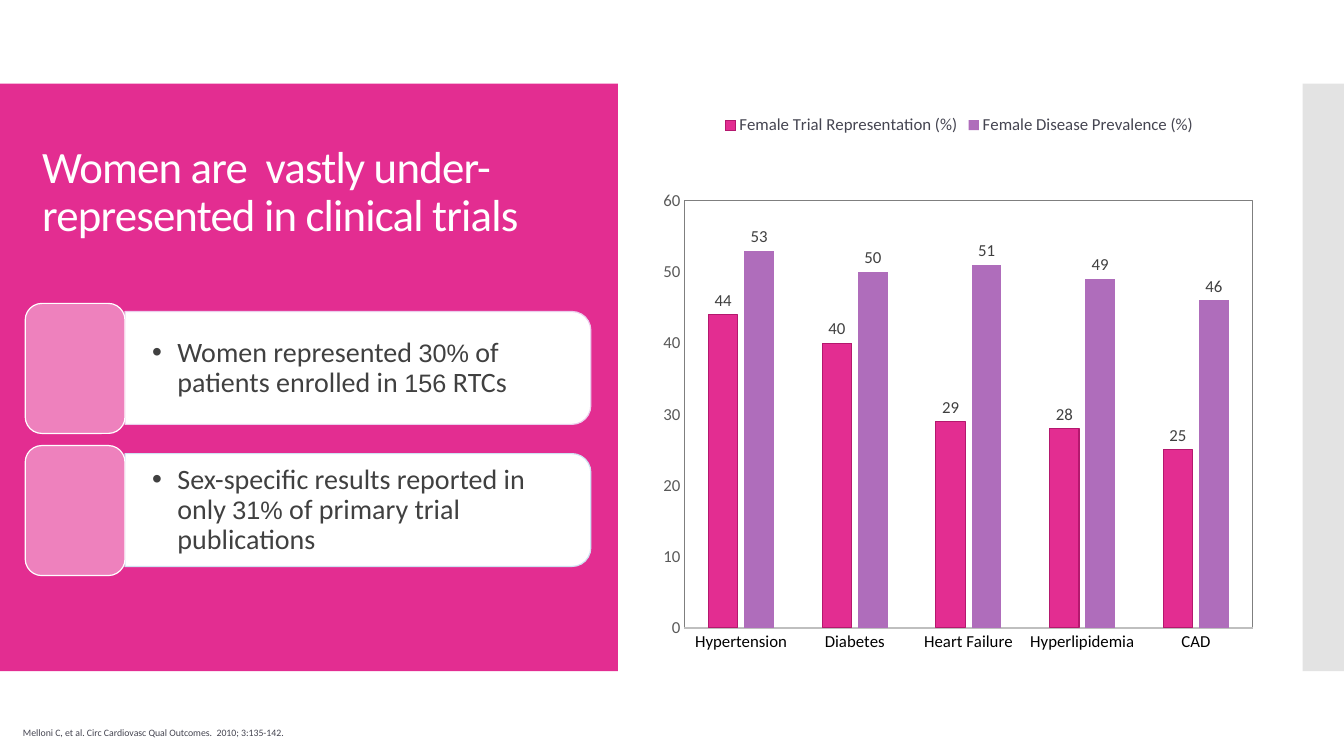
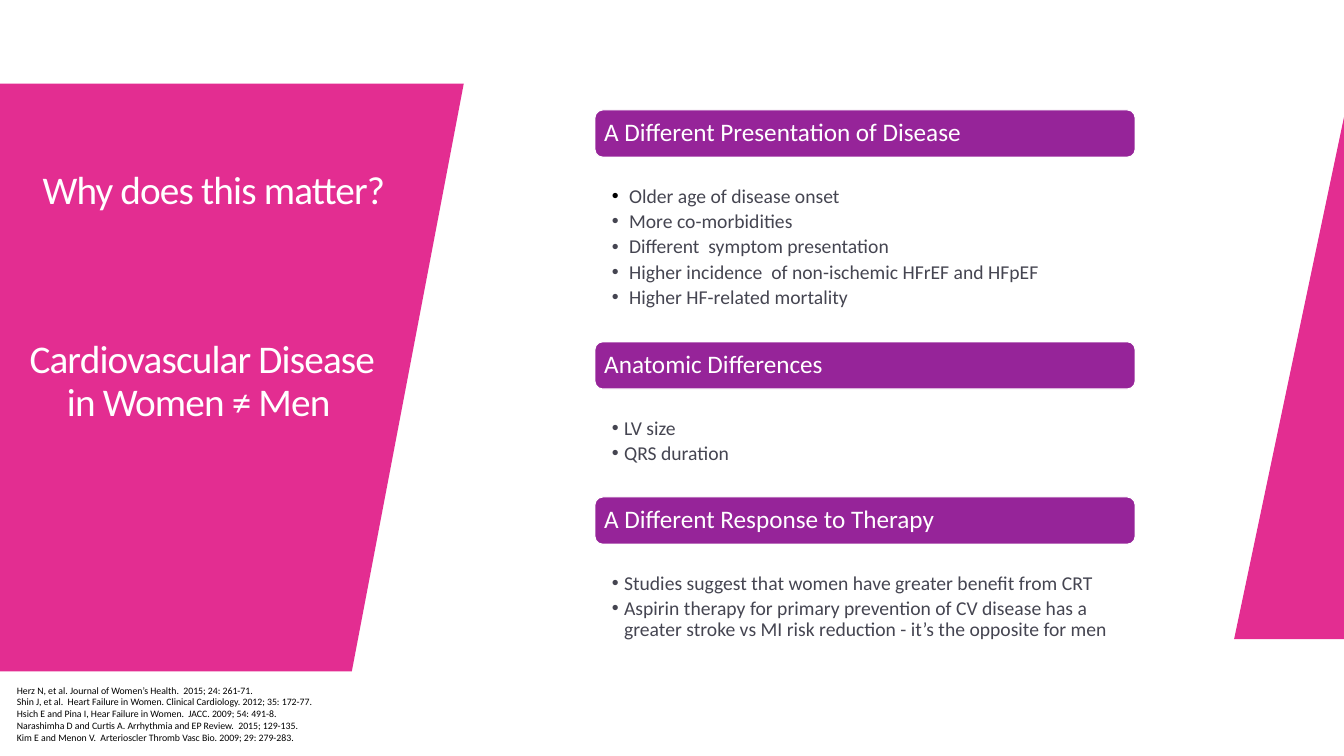
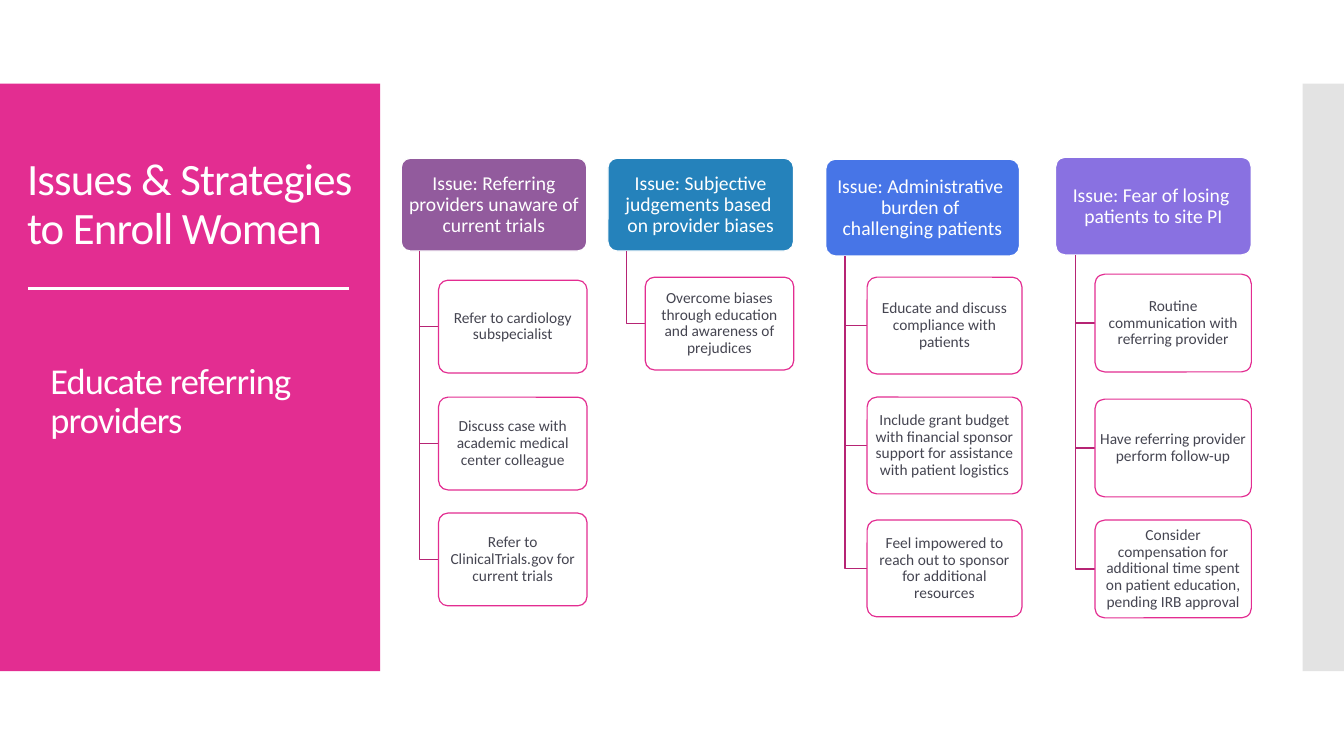
import pptx
import pptx.chart.data
import pptx.dml.color
import pptx.enum.chart
import pptx.enum.shapes
import pptx.enum.text
import pptx.oxml
import pptx.oxml.ns
import pptx.util
from lxml import etree

Inches = pptx.util.Inches
Pt = pptx.util.Pt
SHAPE = pptx.enum.shapes.MSO_SHAPE
ALIGN = pptx.enum.text.PP_ALIGN
ANCHOR = pptx.enum.text.MSO_ANCHOR
qn = pptx.oxml.ns.qn

# Shared look
FONT, FIGURE_FONT = "Calibri", "Arial"
PINK, PURPLE, WHITE, BLACK = "E32D91", "962499", "FFFFFF", "000000"
BODY, DARK, BRANCH = "454551", "404040", "B62474"
BAND_TOP, BAND_HEIGHT = 0.83, 5.83
HAIRLINE = 0.85


def rgb(color):
    return pptx.dml.color.RGBColor.from_string(color)


def set_alpha(shape, percent):
    color = shape._element.spPr.find(qn("a:solidFill"))[0]
    etree.SubElement(color, qn("a:alpha")).set("val", str(percent * 1000))


def style_shape(shape, fill=None, line=None):
    shape.shadow.inherit = False
    if fill:
        shape.fill.solid()
        shape.fill.fore_color.rgb = rgb(fill)
    else:
        shape.fill.background()
    if line:
        shape.line.color.rgb = rgb(line)
        shape.line.width = Pt(HAIRLINE)
    else:
        shape.line.fill.background()
    return shape


def add_block(slide, kind, box, fill, line=None):
    shape = slide.shapes.add_shape(kind, *map(Inches, box))
    return style_shape(shape, fill, line)


def add_outline(slide, points, fill=None, line=None):
    """A closed outline when filled, otherwise an open bent line."""
    corners = [(Inches(x), Inches(y)) for x, y in points]
    builder = slide.shapes.build_freeform(*corners[0])
    builder.add_line_segments(corners[1:], close=fill is not None)
    return style_shape(builder.convert_to_shape(), fill, line)


def add_line(slide, start, end, color, width):
    line = slide.shapes.add_connector(
        pptx.enum.shapes.MSO_CONNECTOR.STRAIGHT, *map(Inches, start + end))
    line.line.color.rgb = rgb(color)
    line.line.width = Pt(width)
    etree.SubElement(line._element.spPr, qn("a:effectLst"))


def add_bullet(paragraph, indent, color=None):
    properties = paragraph._p.get_or_add_pPr()
    properties.set("marL", str(Inches(indent)))
    properties.set("indent", str(-Inches(indent)))
    if color:
        bullet_color = etree.SubElement(properties, qn("a:buClr"))
        etree.SubElement(bullet_color, qn("a:srgbClr")).set("val", color)
    etree.SubElement(properties, qn("a:buFont")).set("typeface", "Arial")
    etree.SubElement(properties, qn("a:buChar")).set("char", "•")


def style_font(font, size, color, name=FONT):
    font.name = name
    font.size = Pt(size)
    font.color.rgb = rgb(color)


def add_run(paragraph, text, size, color, name=FONT, tracking=0):
    run = paragraph.add_run()
    run.text = text
    style_font(run.font, size, color, name)
    if tracking:
        run._r.get_or_add_rPr().set("spc", str(tracking))


def write_text(shape, texts, size, color, align=ALIGN.LEFT, anchor=ANCHOR.MIDDLE,
               insets=(0.1, 0.05, 0.1, 0.05), line_spacing=0.9, tracking=0,
               bullet_indent=None, first_bullet=None, space_after=0):
    """Fill a shape, one paragraph per text; a newline is a line break."""
    frame = shape.text_frame
    frame.word_wrap = True
    frame.vertical_anchor = anchor
    (frame.margin_left, frame.margin_top,
     frame.margin_right, frame.margin_bottom) = map(Inches, insets)
    for index, text in enumerate(texts):
        paragraph = frame.add_paragraph() if index else frame.paragraphs[0]
        if bullet_indent:
            add_bullet(paragraph, bullet_indent, None if index else first_bullet)
        paragraph.alignment = align
        paragraph.line_spacing = line_spacing
        paragraph.space_after = Pt(space_after)
        for number, part in enumerate(text.split("\n")):
            if number:
                paragraph.add_line_break()
            add_run(paragraph, part, size, color, tracking=tracking)
    return frame.paragraphs


def add_text(slide, box, texts, size, color, **options):
    shape = slide.shapes.add_textbox(*map(Inches, box))
    return write_text(shape, texts, size, color, **options)


def add_title(slide, box, texts, size=32, **options):
    return add_text(slide, box, texts, size, WHITE, tracking=-60, **options)


def indent_left(paragraph, indent):
    paragraph._p.get_or_add_pPr().set("marL", str(Inches(indent)))


def add_references(slide, box, references, color):
    add_text(slide, box, references, 7, color, anchor=ANCHOR.TOP, line_spacing=1.0)


def add_bands(slide, panel_width):
    add_block(slide, SHAPE.RECTANGLE, (0, BAND_TOP, panel_width, BAND_HEIGHT), PINK)
    edge = add_block(slide, SHAPE.RECTANGLE,
                     (12.92, BAND_TOP, 0.42, BAND_HEIGHT), "C8C8C8")
    set_alpha(edge, 50)


# Slide 1: facts and chart
def add_fact(slide, top, parts, outline):
    """Parts alternate between plain words and figures."""
    width, height = 4.62, 1.12
    left, card_top = 1.24, top + 0.08
    # The card stands upright before its quarter turn
    card = add_block(slide, SHAPE.ROUND_2_SAME_RECTANGLE,
                     (left + (width - height) / 2, card_top - (width - height) / 2,
                      height, width), WHITE, outline)
    card.rotation = 90
    paragraph, = add_text(slide, (left, card_top + 0.06, 4.57, 1.01), parts[:1], 20,
                          DARK, insets=(0.27, 0.14, 0.27, 0.14), bullet_indent=0.25)
    for index, part in enumerate(parts[1:]):
        size, name = (20, FONT) if index % 2 else (18, FIGURE_FONT)
        add_run(paragraph, part, size, DARK, name)
    add_block(slide, SHAPE.ROUNDED_RECTANGLE, (0.25, top, 0.99, 1.29), "EE81BD", WHITE)


def place_plot(chart, x, y, width, height):
    """Fix the inner plot area, in percent of the chart, and frame it in grey."""
    plot_area = chart._chartSpace.chart.plotArea
    for old in plot_area.findall(qn("c:layout")):
        plot_area.remove(old)
    layout = etree.Element(qn("c:layout"))
    manual = etree.SubElement(layout, qn("c:manualLayout"))
    settings = (("layoutTarget", "inner"), ("xMode", "edge"), ("yMode", "edge"),
                ("x", x / 100), ("y", y / 100), ("w", width / 100), ("h", height / 100))
    for name, value in settings:
        etree.SubElement(manual, qn("c:" + name)).set("val", str(value))
    plot_area.insert(0, layout)
    plot_area.append(pptx.oxml.parse_xml(
        '<c:spPr xmlns:c="http://schemas.openxmlformats.org/drawingml/2006/chart"'
        ' xmlns:a="http://schemas.openxmlformats.org/drawingml/2006/main"><a:noFill/>'
        '<a:ln w="9525"><a:solidFill><a:srgbClr val="7F7F7F"/></a:solidFill></a:ln>'
        '</c:spPr>'))


def add_trial_chart(slide):
    kinds = pptx.enum.chart
    data = pptx.chart.data.CategoryChartData()
    data.categories = ["Hypertension", "Diabetes", "Heart Failure",
                       "Hyperlipidemia", "CAD"]
    data.add_series("Female Trial Representation (%)", (44, 40, 29, 28, 25))
    data.add_series("Female Disease Prevalence (%)", (53, 50, 51, 49, 46))
    chart = slide.shapes.add_chart(
        kinds.XL_CHART_TYPE.COLUMN_CLUSTERED,
        *map(Inches, (6.45, 1.03, 6.13, 5.83)), data).chart
    style_font(chart.font, 10, BLACK)
    chart.has_title = False
    chart.has_legend = True
    chart.legend.position = kinds.XL_LEGEND_POSITION.TOP
    chart.legend.include_in_layout = False
    style_font(chart.legend.font, 12, BODY)

    for axis, color in ((chart.category_axis, BLACK), (chart.value_axis, "595959")):
        axis.has_major_gridlines = False
        axis.major_tick_mark = axis.minor_tick_mark = kinds.XL_TICK_MARK.NONE
        style_font(axis.tick_labels.font, 12, color)
    chart.category_axis.format.line.color.rgb = rgb("BFBFBF")
    chart.category_axis.format.line.width = Pt(1.5)
    chart.value_axis.format.line.fill.background()
    chart.value_axis.minimum_scale = 0
    chart.value_axis.maximum_scale = 60
    chart.value_axis.major_unit = 10

    plot = chart.plots[0]
    plot.gap_width, plot.overlap = 164, -22
    plot.vary_by_categories = False
    for series, color in zip(plot.series, (PINK, "AF6DBB")):
        series.format.fill.solid()
        series.format.fill.fore_color.rgb = rgb(color)
        labels = series.data_labels
        labels.show_value = True
        labels.position = kinds.XL_LABEL_POSITION.OUTSIDE_END
        style_font(labels.font, 12, DARK)
    trial_line = plot.series[0].format.line
    trial_line.color.rgb = rgb("B4186E")
    trial_line.width = Pt(0.75)
    place_plot(chart, 5.5, 16.5, 92, 72.7)


def build_trials(slide):
    add_bands(slide, 6.13)
    add_title(slide, (0.32, 1.23, 5.47, 1.37),
              ["Women are  vastly under-represented in clinical trials"])
    add_fact(slide, 3.01, ["Women represented ", "30%", " of  patients enrolled in ",
                           "156", " RTCs"], "EBCDEC")
    add_fact(slide, 4.42, ["Sex-specific results reported in only ", "31%",
                           " of primary trial publications"], "D0E1F2")
    add_references(slide, (0.13, 7.16, 3.5, 0.22), [
        "Melloni C, et al. Circ Cardiovasc Qual Outcomes.  2010; 3:135-142."], BODY)
    add_trial_chart(slide)


# Slide 2: differences between women and men
def add_topic(slide, top, heading, points, indent=0.12, first_bullet=None):
    left, width, height = 5.9, 5.36, 0.47
    header = add_block(slide, SHAPE.ROUNDED_RECTANGLE, (left, top, width, height),
                       PURPLE, WHITE)
    write_text(header, [heading], 18, WHITE, insets=(0.07, 0.07, 0.07, 0.07))
    add_text(slide, (left, top + 0.73, width, 0.25 * len(points) + 0.1), points, 14,
             BODY, anchor=ANCHOR.TOP, insets=(0.17, 0.03, 0.14, 0.03),
             bullet_indent=indent, first_bullet=first_bullet, space_after=2.9)


def build_differences(slide):
    bottom = BAND_TOP + BAND_HEIGHT
    add_outline(slide, [(3.49, bottom), (0, bottom), (0, BAND_TOP), (4.6, BAND_TOP)],
                PINK)
    question, subject, _ = add_title(
        slide, (-0.17, 1.04, 4.28, 3.82),
        ["Why does this matter?", "Cardiovascular Disease", "in Women ≠ Men"],
        size=28, align=ALIGN.CENTER)
    indent_left(question, 0.3)
    indent_left(subject, 0.07)
    subject.space_before = Pt(91)

    add_topic(slide, 1.09, "A Different Presentation of Disease", [
        "Older age of disease onset", "More co-morbidities",
        "Different  symptom presentation",
        "Higher incidence  of non-ischemic HFrEF and HFpEF",
        "Higher HF-related mortality"], indent=0.17, first_bullet=BLACK)
    add_topic(slide, 3.39, "Anatomic Differences", ["LV size", "QRS duration"])
    add_topic(slide, 4.93, "A Different Response to Therapy", [
        "Studies suggest that women have greater benefit from CRT",
        "Aspirin therapy for primary prevention of CV disease has a greater stroke "
        "vs MI risk reduction - it’s the opposite for men"])

    add_outline(slide, [(13.33, 6.34), (12.24, 6.34), (13.33, 1.16)], PINK)
    add_references(slide, (0.07, 6.74, 3.5, 0.69), [
        "Herz N, et al. Journal of Women’s Health.  2015; 24: 261-71.",
        "Shin J, et al.  Heart Failure in Women. Clinical Cardiology. 2012; 35: 172-77.",
        "Hsich E and Pina I, Hear Failure in Women.  JACC. 2009; 54: 491-8.",
        "Narashimha D and Curtis A. Arrhythmia and EP Review.  2015; 129-135.",
        "Kim E and Menon V.  Arterioscler Thromb Vasc Bio. 2009; 29: 279-283."], BLACK)


# Slide 3: issues and strategies
def add_issue(slide, left, top, height, color, heading, card_left, strategies):
    """Header twice as wide as high, with an elbow down to each strategy card."""
    width, card_width = 2 * height, 1.6 * height
    trunk_x, bottom = left + 0.1 * width, top + height
    header = add_block(slide, SHAPE.ROUNDED_RECTANGLE, (left, top, width, height),
                       color, WHITE)
    header.adjustments[0] = 0.1
    write_text(header, [heading], 14, WHITE, align=ALIGN.CENTER,
               insets=(0.03, 0.03, 0.03, 0.02))
    for card_top, text in strategies:
        middle = card_top + height / 2
        add_outline(slide, [(trunk_x, bottom), (trunk_x, middle), (card_left, middle)],
                    line=BRANCH)
        card = add_block(slide, SHAPE.ROUNDED_RECTANGLE,
                         (card_left, card_top, card_width, height), WHITE, PINK)
        card.adjustments[0] = 0.1
        set_alpha(card, 90)
        write_text(card, [text], 11, BODY, align=ALIGN.CENTER,
                   insets=(0.02, 0.02, 0.02, 0.02))


def build_strategies(slide):
    add_bands(slide, 3.77)
    add_title(slide, (0.17, 1.51, 3.5, 1.82), ["Issues & Strategies to Enroll Women"],
              anchor=ANCHOR.TOP)
    subtitle, = add_title(slide, (0.18, 3.55, 3.41, 1.82),
                          ["Educate referring providers"], size=26, anchor=ANCHOR.TOP)
    indent_left(subtitle, 0.22)
    add_line(slide, (0.28, 2.86), (3.46, 2.86), WHITE, 2.25)

    add_issue(slide, 3.98, 1.57, 0.92, "925B9D",
              "Issue: Referring providers unaware of current trials", 4.35, [
                  (2.78, "Refer to cardiology subspecialist"),
                  (3.94, "Discuss case with academic medical center colleague"),
                  (5.09, "Refer to ClinicalTrials.gov for current trials")])
    add_issue(slide, 6.03, 1.57, 0.92, "2582BB",
              "Issue: Subjective judgements based \non provider biases", 6.4, [
                  (2.75, "Overcome biases through education and awareness of "
                         "prejudices")])
    add_issue(slide, 8.19, 1.58, 0.96, "4775E7",
              "Issue: Administrative \nburden of \nchallenging patients", 8.6, [
                  (2.75, "Educate and discuss compliance with patients"),
                  (3.94, "Include grant budget with financial sponsor support for "
                         "assistance with patient logistics"),
                  (5.16, "Feel impowered to reach out to sponsor for additional "
                         "resources")])
    add_issue(slide, 10.47, 1.56, 0.97, "8971E1",
              "Issue: Fear of losing \npatients to site PI", 10.86, [
                  (2.72, "Routine communication with referring provider"),
                  (3.96, "Have referring provider perform follow-up"),
                  (5.16, "Consider compensation for additional time spent on "
                         "patient education, pending IRB approval")])


def main():
    presentation = pptx.Presentation()
    presentation.slide_width = Inches(13.33)
    presentation.slide_height = Inches(7.5)
    for build in (build_trials, build_differences, build_strategies):
        build(presentation.slides.add_slide(presentation.slide_layouts[6]))
    presentation.save("out.pptx")


if __name__ == "__main__":
    main()
